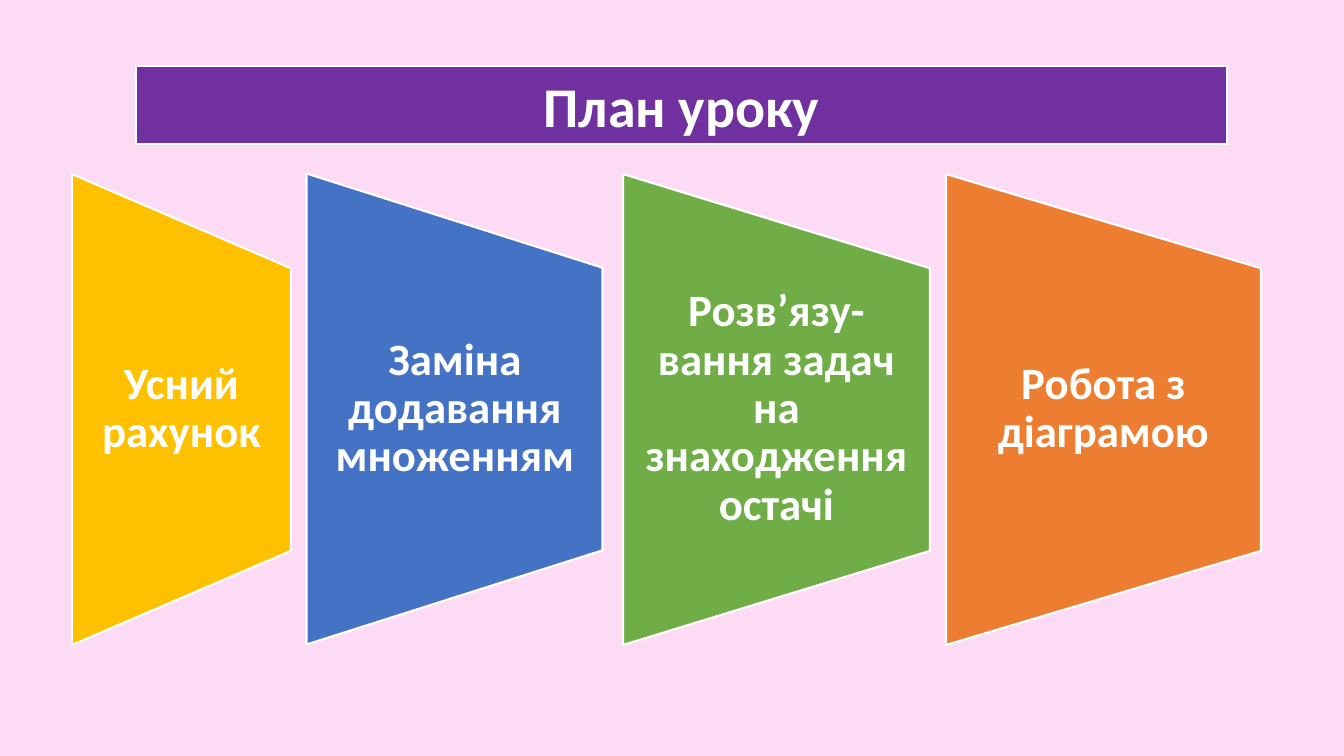
from dataclasses import dataclass

from pptx import Presentation
from pptx import util as u
from pptx.dml.color import RGBColor
from pptx.enum import shapes, text


@dataclass(frozen=True)
class Theme:
    """Colours, type sizes and font of the lesson slide."""
    back: str = "FDDBF4"
    white: str = "FFFFFF"
    purple: str = "7030A0"
    gold: str = "FFC000"
    blue: str = "4472C4"
    green: str = "70AD47"
    orange: str = "ED7D31"
    font: str = "Calibri"
    title: int = 40
    step: int = 32
    line: float = 1.5


def px(n):
    return u.Inches(n / 100.8)


class Deck:
    """Holds the theme and the current slide."""

    def __init__(self, theme):
        self.theme = theme
        self.file = Presentation()
        self.file.slide_width, self.file.slide_height = px(1344), px(756)
        self.slide = self.file.slides.add_slide(self.file.slide_layouts[6])
        fill = self.slide.background.fill
        fill.solid()
        fill.fore_color.rgb = RGBColor.from_string(theme.back)

    def shape(self, kind, box, color):
        item = self.slide.shapes.add_shape(kind, *map(px, box))
        item.shadow.inherit = False
        item.fill.solid()
        item.fill.fore_color.rgb = RGBColor.from_string(color)
        item.line.color.rgb = RGBColor.from_string(self.theme.white)
        item.line.width = u.Pt(self.theme.line)
        return item

    def label(self, frame, words, size):
        frame.word_wrap = True
        frame.vertical_anchor = text.MSO_ANCHOR.MIDDLE
        para = frame.paragraphs[0]
        para.text = words
        para.alignment = text.PP_ALIGN.CENTER
        para.font.name = self.theme.font
        para.font.size = u.Pt(size)
        para.font.bold = True
        para.font.color.rgb = RGBColor.from_string(self.theme.white)
        return para

    def title(self, words, box):
        bar = self.shape(shapes.MSO_SHAPE.RECTANGLE, box, self.theme.purple)
        self.label(bar.text_frame, words, self.theme.title)
        bar.text_frame.auto_size = text.MSO_AUTO_SIZE.SHAPE_TO_FIT_TEXT

    def step(self, words, color, left, width, top=174, height=471):
        turned = (left + (width - height) // 2, top + (height - width) // 2, height, width)
        panel = self.shape(shapes.MSO_SHAPE.FLOWCHART_MANUAL_OPERATION, turned, color)
        panel.rotation = 270
        inner = (left, top + height // 5, width, height * 3 // 5)
        frame = self.slide.shapes.add_textbox(*map(px, inner)).text_frame
        frame.margin_left = frame.margin_right = px(22)
        frame.margin_top = frame.margin_bottom = 0
        self.label(frame, words, self.theme.step).line_spacing = 0.9


def main():
    look = Theme()
    deck = Deck(look)
    deck.title("План уроку", (136, 66, 1091, 78))
    steps = [
        ("Усний рахунок", look.gold, 72, 219),
        ("Заміна додавання множенням", look.blue, 307, 296),
        ("Розв’язу-вання задач на знаходження остачі", look.green, 623, 307),
        ("Робота з діаграмою", look.orange, 946, 315),
    ]
    for step in steps:
        deck.step(*step)
    deck.file.save("out.pptx")


if __name__ == "__main__":
    main()
